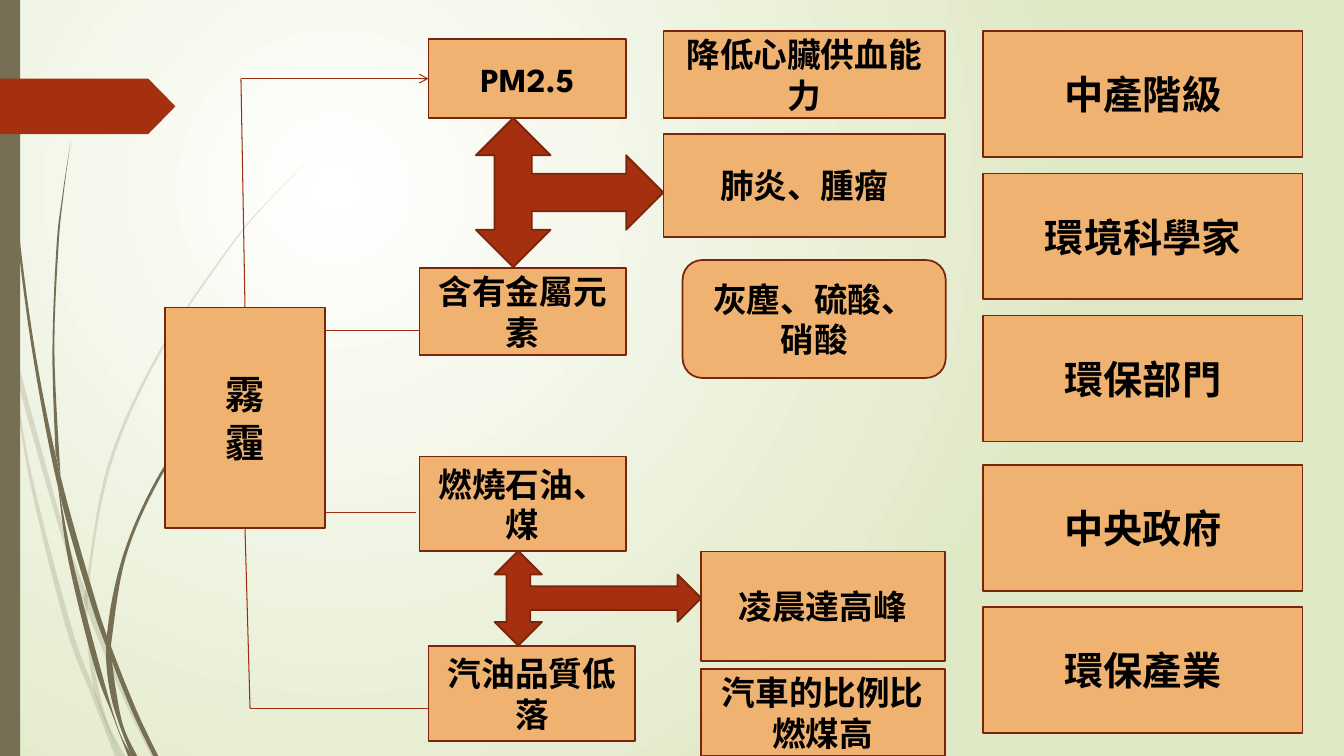
from dataclasses import dataclass

import pptx
import pptx.dml.color
import pptx.enum.shapes
import pptx.enum.text
import pptx.oxml
import pptx.oxml.ns
import pptx.util

Inches = pptx.util.Inches
SHAPE = pptx.enum.shapes.MSO_SHAPE


@dataclass(frozen=True)
class Theme:
    stem: str = "766F54"
    red: str = "A53010"
    line: str = "9E2E0F"
    card: str = "F0B270"
    border: str = "7A240C"
    ink: str = "000000"
    glow: str = "FFFFFF"
    meadow: str = "DFE8C4"
    font: str = "League Spartan"
    large: int = 28
    small: int = 24
    border_width: float = 1.25
    line_width: float = 0.75


@dataclass(frozen=True)
class Box:
    """A region in inches."""
    left: float
    top: float
    width: float
    height: float

    def inside(self, left, top, width, height):
        return Box(self.left + left, self.top + top, width, height)

    def point(self, x, y):
        return Inches(self.left + x), Inches(self.top + y)

    def lengths(self):
        return [Inches(v) for v in (self.left, self.top, self.width, self.height)]


THEME = Theme()

# Each blade of grass is two edges: down one side, then back up the other.
PALE_BLADES = [
    ([(0, 2.82), (0.14, 3.45), (0.62, 5.2), (0.85, 5.86), (1.27, 6.92), (1.55, 7.5)],
     [(1.5, 7.5), (1.23, 6.94), (0.88, 6.1), (0.58, 5.22), (0.17, 3.76), (0, 2.99)]),
    ([(0.11, 3.5), (0.31, 4.69), (0.7, 6.19), (0.93, 6.83), (1.19, 7.5)],
     [(1.14, 7.5), (0.92, 6.93), (0.65, 6.21), (0.28, 4.7), (0.11, 3.5)]),
    ([(3.12, 1.53), (2.68, 1.98), (2.29, 2.45), (1.6, 3.49), (1.1, 4.62),
      (0.88, 5.84), (0.91, 6.46), (1.05, 7.11), (1.24, 7.5)],
     [(1.19, 7.5), (0.93, 6.83), (0.84, 5.99), (0.85, 5.84), (1.07, 4.61),
      (1.58, 3.48), (2.28, 2.44), (2.68, 1.97), (3.12, 1.53)]),
]
DARK_BLADES = [
    ([(0.04, 0), (0.08, 1.09), (0.19, 2.32), (0.36, 3.55), (0.6, 4.72),
      (0.93, 5.9), (1.1, 6.41), (1.36, 7.06), (1.57, 7.5)],
     [(1.52, 7.5), (1.32, 7.08), (1.11, 6.56), (0.88, 5.92), (0.57, 4.81),
      (0.33, 3.55), (0.17, 2.33), (0.07, 1.1), (0.03, 0)]),
    ([(0.57, 4.77), (0.72, 5.56), (0.98, 6.57), (1.17, 7.22), (1.31, 7.5)],
     [(1.27, 7.5), (1.11, 7.08), (0.93, 6.59), (0.68, 5.57), (0.57, 4.77)]),
    ([(0.7, 1.41), (0.63, 1.93), (0.58, 2.45), (0.54, 3.49), (0.6, 4.72)],
     [(0.55, 4.49), (0.52, 3.49), (0.56, 2.45), (0.62, 1.93), (0.7, 1.41)]),
    ([(2.61, 3.44), (2.05, 4.06), (1.58, 4.76), (1.25, 5.52), (1.11, 6.33),
      (1.11, 6.56), (1.21, 7.16), (1.36, 7.5)],
     [(1.3, 7.5), (1.1, 6.91), (1.06, 6.31), (1.22, 5.51), (1.56, 4.74),
      (2.04, 4.05), (2.61, 3.44)]),
]


def smooth(knots, steps=8):
    """Catmull-Rom points through the knots."""
    ends = [knots[0], *knots, knots[-1]]
    points = [knots[0]]
    for a, b, c, d in zip(ends, ends[1:], ends[2:], ends[3:]):
        for step in range(1, steps + 1):
            t = step / steps
            points.append(tuple(
                (2 * q + (r - p) * t + (2 * p - 5 * q + 4 * r - s) * t ** 2
                 + (3 * q - p - 3 * r + s) * t ** 3) / 2
                for p, q, r, s in zip(a, b, c, d)))
    return points


def rgb(colour):
    return pptx.dml.color.RGBColor.from_string(colour)


def paint(shape, fill, border=None):
    shape.shadow.inherit = False
    shape.fill.solid()
    shape.fill.fore_color.rgb = rgb(fill)
    if border:
        shape.line.color.rgb = rgb(border)
        shape.line.width = pptx.util.Pt(THEME.border_width)
    else:
        shape.line.fill.background()


def add_blade(slide, box, edges, opacity):
    points = [box.point(x, y) for edge in edges for x, y in smooth(edge)]
    builder = slide.shapes.build_freeform(*points[0], scale=1.0)
    builder.add_line_segments(points[1:], close=True)
    blade = builder.convert_to_shape()
    paint(blade, THEME.stem)
    colour = blade.fill._xPr.find(".//" + pptx.oxml.ns.qn("a:srgbClr"))
    alpha = colour.makeelement(pptx.oxml.ns.qn("a:alpha"), {"val": str(opacity * 1000)})
    colour.append(alpha)


def add_card(slide, box, lines, size, kind=SHAPE.RECTANGLE):
    card = slide.shapes.add_shape(kind, *box.lengths())
    paint(card, THEME.card, THEME.border)
    frame = card.text_frame
    frame.word_wrap = True
    frame.vertical_anchor = pptx.enum.text.MSO_ANCHOR.MIDDLE
    for index, line in enumerate(lines):
        paragraph = frame.add_paragraph() if index else frame.paragraphs[0]
        paragraph.alignment = pptx.enum.text.PP_ALIGN.CENTER
        run = paragraph.add_run()
        run.text = line
        run.font.name = THEME.font
        run.font.size = pptx.util.Pt(size)
        run.font.bold = True
        run.font.color.rgb = rgb(THEME.ink)
    return card


def add_link(slide, start, end):
    link = slide.shapes.add_connector(
        pptx.enum.shapes.MSO_CONNECTOR.STRAIGHT, *start, *end)
    link.line.color.rgb = rgb(THEME.line)
    link.line.width = pptx.util.Pt(THEME.line_width)
    properties = link._element.spPr
    properties.append(properties.makeelement(pptx.oxml.ns.qn("a:effectLst"), {}))
    return link


def backdrop(slide, box):
    """Radial glow, grass, side bar and red pennant."""
    slide.background.fill.solid()
    background = slide._element.cSld.find(pptx.oxml.ns.qn("p:bg"))[0]
    background.replace(background[0], pptx.oxml.parse_xml(
        f'<a:gradFill {pptx.oxml.ns.nsdecls("a")} rotWithShape="1"><a:gsLst>'
        f'<a:gs pos="0"><a:srgbClr val="{THEME.glow}"/></a:gs>'
        f'<a:gs pos="100000"><a:srgbClr val="{THEME.meadow}"/></a:gs></a:gsLst>'
        '<a:path path="circle"><a:fillToRect l="50000" t="50000" r="100000" b="100000"/>'
        '</a:path></a:gradFill>'))
    for blades, opacity in ((PALE_BLADES, 20), (DARK_BLADES, 100)):
        for edges in blades:
            add_blade(slide, box, edges, opacity)
    bar = slide.shapes.add_shape(SHAPE.RECTANGLE, *box.inside(0, 0, 0.2, box.height).lengths())
    paint(bar, THEME.stem)
    pennant = slide.shapes.add_shape(SHAPE.PENTAGON, *box.inside(0, 0.78, 1.74, 0.55).lengths())
    pennant.adjustments[0] = 0.49
    paint(pennant, THEME.red)


def haze_map(slide, box):
    """Haze with its causes and their effects."""
    upper, lower = box.point(0.75, 0.47), box.point(0.84, 6.72)
    add_link(slide, lower, box.point(2.98, 6.72))
    add_link(slide, box.point(1.59, 2.97), box.point(2.52, 2.97))
    add_link(slide, box.point(1.59, 4.77), box.point(2.49, 4.77))

    haze = add_card(slide, box.inside(0, 2.74, 1.58, 2.19), ["霧", "霾"], THEME.large)
    particles = add_card(slide, box.inside(2.61, 0.08, 1.96, 0.78), ["PM2.5"], THEME.small)
    for text, place in (
            ("含有金屬元素", (2.52, 2.35, 2.05, 0.86)),
            ("燃燒石油、煤", (2.52, 4.22, 2.05, 0.94)),
            ("汽油品質低落", (2.61, 6.1, 2.05, 0.94)),
            ("降低心臟供血能力", (4.94, 0, 2.79, 0.86)),
            ("肺炎、腫瘤", (4.94, 1.02, 2.79, 1.02)),
            ("凌晨達高峰", (5.31, 5.16, 2.42, 1.09)),
            ("汽車的比例比燃煤高", (5.31, 6.33, 2.42, 0.86))):
        add_card(slide, box.inside(*place), [text], THEME.small)
    add_card(slide, box.inside(5.13, 2.27, 2.61, 1.17), ["灰塵、硫酸、硝酸"],
             THEME.small, SHAPE.ROUNDED_RECTANGLE)

    for place in ((3.27, 0.67, 1.48, 1.86), (3.82, 4.6, 0.94, 2.05)):
        fork = slide.shapes.add_shape(SHAPE.LEFT_RIGHT_UP_ARROW, *box.inside(*place).lengths())
        fork.rotation = 90
        paint(fork, THEME.red, THEME.border)

    for side, corner in ((0, upper), (2, lower)):
        add_link(slide, corner, corner).begin_connect(haze, side)
        slide.shapes[-1].end_x, slide.shapes[-1].end_y = corner
    to_particles = add_link(slide, upper, box.point(2.61, 0.47))
    to_particles.end_connect(particles, 1)
    outline = to_particles.line._get_or_add_ln()
    outline.append(outline.makeelement(pptx.oxml.ns.qn("a:tailEnd"), {"type": "arrow"}))


def stakeholders(slide, box):
    """Column of parties: the upper three and the lower two."""
    height, step = 1.25, 1.41
    for start, parties in ((0, ["中產階級", "環境科學家", "環保部門"]),
                           (4.3, ["中央政府", "環保產業"])):
        for row, party in enumerate(parties):
            add_card(slide, box.inside(0, start + row * step, box.width, height),
                     [party], THEME.large)


def main():
    deck = pptx.Presentation()
    deck.slide_width, deck.slide_height = Inches(13.33), Inches(7.5)
    slide = deck.slides.add_slide(deck.slide_layouts[6])
    backdrop(slide, Box(0, 0, 13.33, 7.5))
    haze_map(slide, Box(1.64, 0.31, 7.74, 7.19))
    stakeholders(slide, Box(9.75, 0.31, 3.17, 6.96))
    deck.save("out.pptx")


if __name__ == "__main__":
    main()
